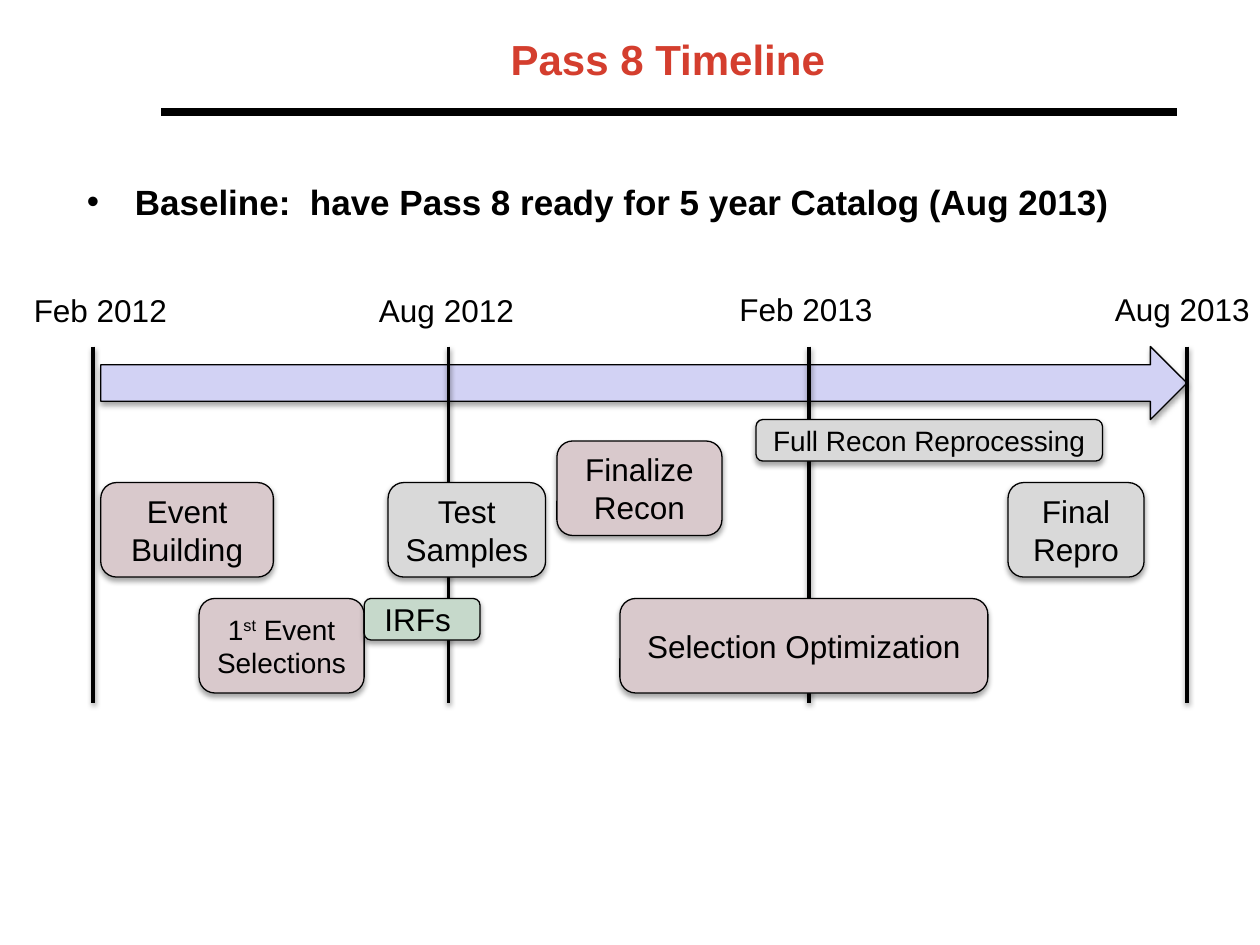
from lxml import etree
from pptx import Presentation
from pptx.dml.color import RGBColor
from pptx.enum import shapes, text
from pptx.oxml.ns import qn
from pptx.util import Inches, Pt

COLORS = {"ink": "000000", "title": "D43E2E", "arrow": "D2D2F4",
          "processing": "D9D9D9", "analysis": "D9C9CC", "response": "C6D9CB"}

TITLE = "Pass 8 Timeline"
BASELINE = "Baseline:  have Pass 8 ready for 5 year Catalog (Aug 2013)"

# Date, line x, label left, label top
MILESTONES = [("Feb 2012", 0.74, 0.17, 2.26), ("Aug 2012", 3.56, 2.91, 2.26),
              ("Feb 2013", 6.42, 5.77, 2.25), ("Aug 2013", 9.42, 8.75, 2.25)]
LINE_TOP, LINE_BOTTOM = 2.75, 5.58

# Text runs (a leading ^ marks superscript), kind, size, left, top, width, height
TASKS = [
    (["Full Recon Reprocessing"], "processing", 16, 6, 3.33, 2.75, 0.33),
    (["Final Repro"], "processing", 18, 8, 3.83, 1.08, 0.75),
    (["Selection Optimization"], "analysis", 18, 4.92, 4.75, 2.92, 0.75),
    (["Test Samples"], "processing", 18, 3.08, 3.83, 1.25, 0.75),
    (["1", "^st", " Event Selections"], "analysis", 16, 1.58, 4.75, 1.31, 0.75),
    (["Event Building"], "analysis", 18, 0.8, 3.83, 1.37, 0.75),
    (["IRFs "], "response", 18, 2.89, 4.75, 0.92, 0.33),
    (["Finalize Recon"], "analysis", 18, 4.42, 3.5, 1.31, 0.75),
]


def color(name):
    return RGBColor.from_string(COLORS[name])


def box(*lengths):
    return [Inches(length) for length in lengths]


def add_run(paragraph, words, size, ink="ink", bold=False):
    run = paragraph.add_run()
    run.text = words.lstrip("^")
    run.font.name = "Arial"
    run.font.size = Pt(size)
    run.font.bold = bold
    run.font.color.rgb = color(ink)
    if words.startswith("^"):
        run._r.get_or_add_rPr().set("baseline", "30000")


def add_effects(item, opacity=None, distance=1.8):
    """Give the item a soft shadow below it, or no shadow without an opacity."""
    effects = etree.SubElement(item._element.spPr, qn("a:effectLst"))
    if opacity:
        shadow = etree.SubElement(effects, qn("a:outerShdw"), blurRad=str(Pt(3.1)),
                                  dist=str(Pt(distance)), dir="5400000", rotWithShape="0")
        ink = etree.SubElement(shadow, qn("a:srgbClr"), val=COLORS["ink"])
        etree.SubElement(ink, qn("a:alpha"), val=str(opacity * 1000))


def add_line(x1, y1, x2, y2, width, opacity=None):
    line = slide.shapes.add_connector(shapes.MSO_CONNECTOR.STRAIGHT, *box(x1, y1, x2, y2))
    line.line.color.rgb = color("ink")
    line.line.width = Pt(width)
    add_effects(line, opacity, 1.6)


def add_block(preset, fill, *place):
    block = slide.shapes.add_shape(preset, *box(*place))
    block.fill.solid()
    block.fill.fore_color.rgb = color(fill)
    block.line.color.rgb = color("ink")
    block.line.width = Pt(0.75)
    add_effects(block, 35)
    return block


deck = Presentation()
deck.slide_width, deck.slide_height = box(10, 7.5)
slide = deck.slides.add_slide(deck.slide_layouts[5])

# Title and rule
title = slide.shapes.title
title.left, title.top, title.width, title.height = box(1.24, 0.11, 8.12, 0.72)
title.text_frame.vertical_anchor = text.MSO_ANCHOR.MIDDLE
heading = title.text_frame.paragraphs[0]
heading.alignment = text.PP_ALIGN.CENTER
add_run(heading, TITLE, 24, "title", True)
add_line(1.28, 0.89, 9.34, 0.89, 4.5)

# Baseline bullet
baseline = slide.shapes.add_textbox(*box(0.69, 1.38, 8.74, 0.5)).text_frame
baseline.word_wrap = True
baseline.margin_left = baseline.margin_right = 0
bullet = baseline.paragraphs[0]
bullet_props = bullet._p.get_or_add_pPr()
bullet_props.set("marL", str(Inches(0.38)))
bullet_props.set("indent", str(Inches(-0.38)))
etree.SubElement(bullet_props, qn("a:buFont"), typeface="Arial")
etree.SubElement(bullet_props, qn("a:buChar"), char="•")
add_run(bullet, BASELINE, 20, bold=True)

# Time arrow, milestone lines and dates
add_block(shapes.MSO_SHAPE.RIGHT_ARROW, "arrow", 0.8, LINE_TOP, 8.62, 0.58)
for date, x, left, top in MILESTONES:
    add_line(x, LINE_TOP, x, LINE_BOTTOM, 2, 38)
    label = slide.shapes.add_textbox(*box(left, top, 1.3, 0.4)).text_frame
    label.word_wrap = False
    add_run(label.paragraphs[0], date, 18)

# Tasks
for runs, kind, size, *place in TASKS:
    task = add_block(shapes.MSO_SHAPE.ROUNDED_RECTANGLE, kind, *place).text_frame
    task.word_wrap = True
    task.vertical_anchor = text.MSO_ANCHOR.MIDDLE
    caption = task.paragraphs[0]
    caption.alignment = text.PP_ALIGN.CENTER
    for words in runs:
        add_run(caption, words, size)

deck.save("out.pptx")
